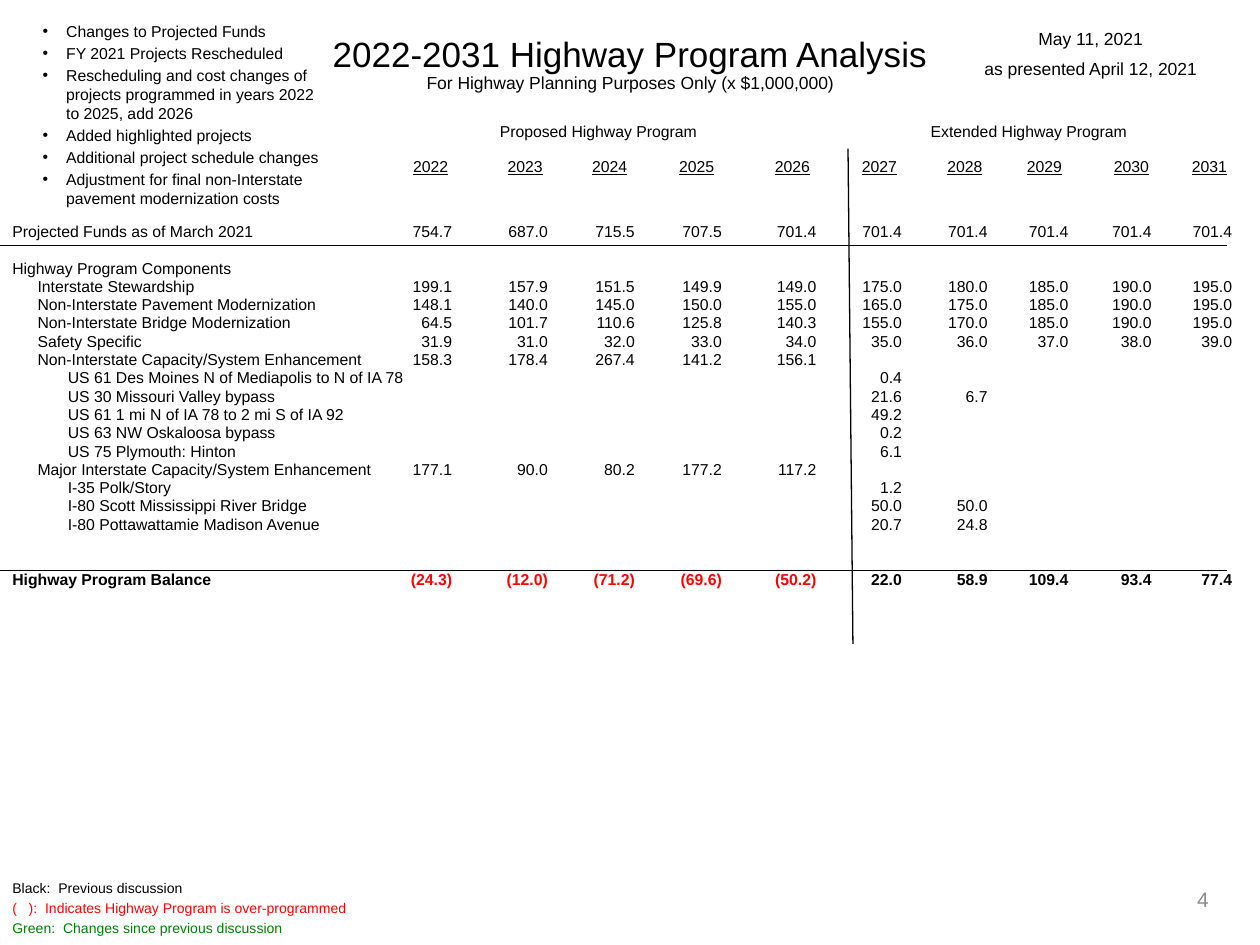
from lxml.etree import SubElement
from pptx import Presentation
from pptx.dml.color import RGBColor
from pptx.enum.shapes import MSO_CONNECTOR
from pptx.enum.text import MSO_ANCHOR, PP_ALIGN
from pptx.oxml.ns import qn
from pptx.util import Pt

BLACK = RGBColor(0, 0, 0)
RED = RGBColor(255, 0, 0)
GREEN = RGBColor(0, 128, 0)
GRAY = RGBColor(140, 140, 140)

TITLE = "2022-2031 Highway Program Analysis"
SUBTITLE = "For Highway Planning Purposes Only (x $1,000,000)"
DATES = ["May 11, 2021", "as presented April 12, 2021"]
PAGE_NUMBER = "4"
CHANGES = [
    "Changes to Projected Funds",
    "FY 2021 Projects Rescheduled",
    "Rescheduling and cost changes of projects programmed in years 2022 to 2025, add 2026",
    "Added highlighted projects",
    "Additional project schedule changes",
    "Adjustment for final non-Interstate pavement modernization costs",
]
LEGEND = [
    ("Black:  Previous discussion", BLACK),
    ("(   ):  Indicates Highway Program is over-programmed", RED),
    ("Green:  Changes since previous discussion", GREEN),
]
PROGRAMS = ["Proposed Highway Program", "Extended Highway Program"]
YEARS = [str(year) for year in range(2022, 2032)]

# level, label, blank years before the first value, values
ROWS = [
    (0, "Projected Funds as of March 2021", 0, "754.7 687.0 715.5 707.5 701.4 701.4 701.4 701.4 701.4 701.4"),
    (0, "Highway Program Components", 0, ""),
    (1, "Interstate Stewardship", 0, "199.1 157.9 151.5 149.9 149.0 175.0 180.0 185.0 190.0 195.0"),
    (1, "Non-Interstate Pavement Modernization", 0, "148.1 140.0 145.0 150.0 155.0 165.0 175.0 185.0 190.0 195.0"),
    (1, "Non-Interstate Bridge Modernization", 0, "64.5 101.7 110.6 125.8 140.3 155.0 170.0 185.0 190.0 195.0"),
    (1, "Safety Specific", 0, "31.9 31.0 32.0 33.0 34.0 35.0 36.0 37.0 38.0 39.0"),
    (1, "Non-Interstate Capacity/System Enhancement", 0, "158.3 178.4 267.4 141.2 156.1"),
    (2, "US 61 Des Moines N of Mediapolis to N of IA 78", 5, "0.4"),
    (2, "US 30 Missouri Valley bypass", 5, "21.6 6.7"),
    (2, "US 61 1 mi N of IA 78 to 2 mi S of IA 92", 5, "49.2"),
    (2, "US 63 NW Oskaloosa bypass", 5, "0.2"),
    (2, "US 75 Plymouth: Hinton", 5, "6.1"),
    (1, "Major Interstate Capacity/System Enhancement", 0, "177.1 90.0 80.2 177.2 117.2"),
    (2, "I-35 Polk/Story", 5, "1.2"),
    (2, "I-80 Scott Mississippi River Bridge", 5, "50.0 50.0"),
    (2, "I-80 Pottawattamie Madison Avenue", 5, "20.7 24.8"),
    (0, "Highway Program Balance", 0, "(24.3) (12.0) (71.2) (69.6) (50.2) 22.0 58.9 109.4 93.4 77.4"),
]
BALANCE = "Highway Program Balance"

ROW_PITCH = 10.46
GAPS_BEFORE = {"Highway Program Components": ROW_PITCH, BALANCE: 2 * ROW_PITCH}
LEVEL_STOPS = [14.4, 31.7]
VALUE_STOPS = [251.3, 306, 355.7, 405.4, 459.4, 508.3, 557.3, 603.4, 651, 697]
YEAR_STOPS = [239, 293, 341.3, 391, 445.7, 495.4, 544.3, 589.7, 639.4, 684]
PROGRAM_STOPS = [334.8, 580.8]
RULES = [
    (0, 140.4, 701.3, 140.4),
    (487.4, 367.9, 484.6, 85),
    (0, 326.2, 701.3, 326.2),
]


def add_text_box(slide, left, top, width, height, **frame_format):
    frame = slide.shapes.add_textbox(Pt(left), Pt(top), Pt(width), Pt(height)).text_frame
    for name, value in {"word_wrap": True, **frame_format}.items():
        setattr(frame, name, value)
    return frame


def add_paragraph(frame, **paragraph_format):
    first = frame.paragraphs[0]
    paragraph = frame.add_paragraph() if first.runs else first
    for name, value in paragraph_format.items():
        setattr(paragraph, name, value)
    return paragraph


def add_run(paragraph, text, size, color=BLACK, **font_format):
    run = paragraph.add_run()
    run.text = text
    for name, value in {"name": "Arial", "size": Pt(size), **font_format}.items():
        setattr(run.font, name, value)
    run.font.color.rgb = color


def set_tabs(paragraph, stops):
    tab_list = SubElement(paragraph._p.get_or_add_pPr(), qn("a:tabLst"))
    for position, alignment in stops:
        SubElement(tab_list, qn("a:tab"), pos=str(int(Pt(position))), algn=alignment)


def add_list(slide, box, lines, size, gap, alignment=PP_ALIGN.LEFT):
    frame = add_text_box(slide, *box)
    for index, (text, color) in enumerate(lines):
        paragraph = add_paragraph(frame, alignment=alignment, space_before=Pt(gap if index else 0))
        add_run(paragraph, text, size, color)
    return frame


def add_program_rows(slide):
    frame = add_text_box(slide, 0, 113, 720, 242.6, margin_top=Pt(3.6 + ROW_PITCH))
    stops = [(stop, "l") for stop in LEVEL_STOPS] + [(stop, "r") for stop in VALUE_STOPS]
    for level, label, blanks, values in ROWS:
        paragraph = add_paragraph(
            frame, line_spacing=Pt(ROW_PITCH), space_before=Pt(GAPS_BEFORE.get(label, 0))
        )
        set_tabs(paragraph, stops[level and 0:])
        bold = label == BALANCE
        add_run(paragraph, "\t" * level + label + "\t" * blanks, 9, bold=bold)
        for value in values.split():
            add_run(paragraph, "\t" + value, 9, RED if value.startswith("(") else BLACK, bold=bold)


def add_column_headings(slide):
    frame = add_text_box(slide, 0, 71.3, 720, 35.3, margin_top=0)
    heading_rows = [(PROGRAMS, PROGRAM_STOPS, 0, False), (YEARS, YEAR_STOPS, 10.6, True)]
    for headings, stops, gap, underline in heading_rows:
        paragraph = add_paragraph(frame, line_spacing=Pt(9.3), space_before=Pt(gap))
        set_tabs(paragraph, [(stop, "ctr") for stop in stops])
        for heading in headings:
            add_run(paragraph, "\t", 9)
            add_run(paragraph, heading, 9, underline=underline)


def add_title(slide):
    frame = add_text_box(slide, 0, 3.6, 720, 50.4, margin_top=Pt(18.9))
    for text, size, spacing in [(TITLE, 20, 20), (SUBTITLE, 10, 10.5)]:
        paragraph = add_paragraph(frame, alignment=PP_ALIGN.CENTER, line_spacing=Pt(spacing))
        add_run(paragraph, text, size)


def add_rules(slide):
    for ends in RULES:
        rule = slide.shapes.add_connector(MSO_CONNECTOR.STRAIGHT, *map(Pt, ends))
        rule.line.color.rgb = BLACK
        rule.line.width = Pt(0.75)
        SubElement(rule._element.spPr, qn("a:effectLst"))


def add_changes(slide):
    frame = add_list(slide, (17.3, 8.6, 177.8, 142.6), [(text, BLACK) for text in CHANGES], 9, 1.8)
    for paragraph in frame.paragraphs:
        properties = paragraph._p.get_or_add_pPr()
        properties.set("marL", str(int(Pt(13.5))))
        properties.set("indent", str(int(Pt(-13.5))))
        SubElement(properties, qn("a:buFont"), typeface="Arial")
        SubElement(properties, qn("a:buChar"), char="•")


def main():
    presentation = Presentation()
    presentation.slide_width, presentation.slide_height = Pt(720), Pt(540)
    slide = presentation.slides.add_slide(presentation.slide_layouts[6])
    add_program_rows(slide)
    add_column_headings(slide)
    add_title(slide)
    add_rules(slide)
    page_frame = add_text_box(slide, 530, 499.7, 167.8, 28.8, vertical_anchor=MSO_ANCHOR.MIDDLE)
    add_run(add_paragraph(page_frame, alignment=PP_ALIGN.RIGHT), PAGE_NUMBER, 12, GRAY)
    add_list(slide, (0, 499, 275.8, 40.3), LEGEND, 8, 1.9)
    dates = [(text, BLACK) for text in DATES]
    add_list(slide, (542.9, 12.2, 160.6, 37.4), dates, 10, 5.6, PP_ALIGN.CENTER)
    add_changes(slide)
    presentation.save("out.pptx")


if __name__ == "__main__":
    main()
